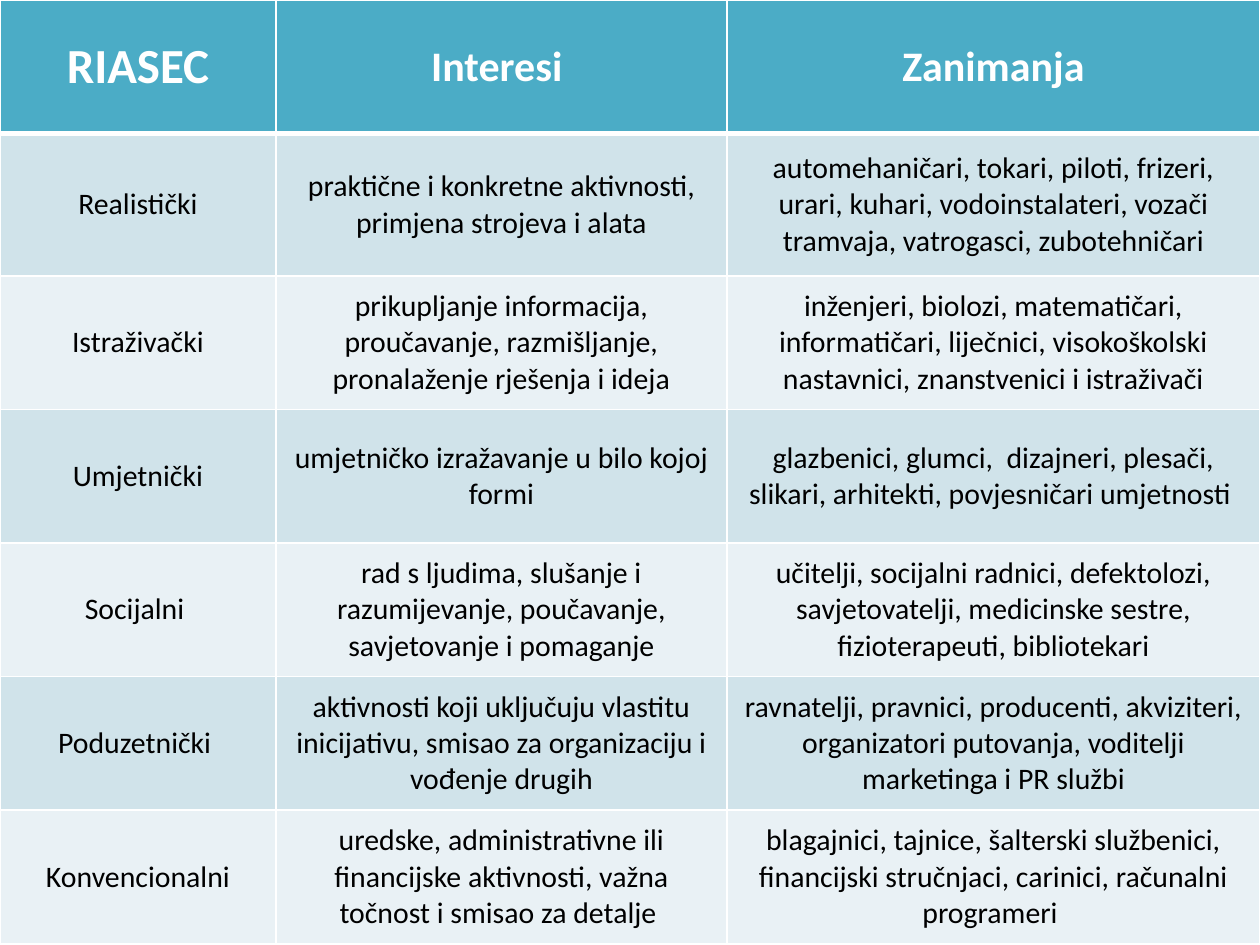
from lxml import etree
from pptx import Presentation
from pptx.dml.color import RGBColor
from pptx.enum.text import MSO_ANCHOR as Anchor, PP_ALIGN as Align
from pptx.oxml.ns import qn
from pptx.util import Inches, Pt

COLORS = {
    "header": "4BACC6",
    "odd_row": "D0E3EA",
    "even_row": "E9F1F5",
    "border": "FFFFFF",
    "header_text": "FFFFFF",
    "body_text": "000000",
}
FONT = "Calibri"
COLUMN_WIDTHS = [2.19, 3.58, 4.23]
ROW_HEIGHTS = [1.06, 1.13] + [1.06] * 5
HEADER_SIZES = [28, 24, 24]
BODY_SIZE = 17

ROWS = [
    ("RIASEC", "Interesi ", "Zanimanja"),
    ("Realistički",
     "praktične i konkretne aktivnosti, primjena strojeva i alata",
     "automehaničari, tokari, piloti, frizeri, urari, kuhari, vodoinstalateri, "
     "vozači tramvaja, vatrogasci, zubotehničari"),
    ("Istraživački",
     "prikupljanje informacija, proučavanje, razmišljanje, "
     "pronalaženje rješenja i ideja",
     "inženjeri, biolozi, matematičari, informatičari, liječnici, "
     "visokoškolski nastavnici, znanstvenici i istraživači"),
    ("Umjetnički",
     "umjetničko izražavanje u bilo kojoj formi",
     "glazbenici, glumci,  dizajneri, plesači, slikari, arhitekti, "
     "povjesničari umjetnosti "),
    ("Socijalni ",
     "rad s ljudima, slušanje i razumijevanje, poučavanje, "
     "savjetovanje i pomaganje",
     "učitelji, socijalni radnici, defektolozi, savjetovatelji, "
     "medicinske sestre, fizioterapeuti, bibliotekari"),
    ("Poduzetnički ",
     "aktivnosti koji uključuju vlastitu inicijativu, "
     "smisao za organizaciju i vođenje drugih",
     "ravnatelji, pravnici, producenti, akviziteri, organizatori putovanja, "
     "voditelji marketinga i PR službi"),
    ("Konvencionalni",
     "uredske, administrativne ili financijske aktivnosti, "
     "važna točnost i smisao za detalje ",
     "blagajnici, tajnice, šalterski službenici, financijski stručnjaci, "
     "carinici, računalni programeri "),
]


def color(name):
    return RGBColor.from_string(COLORS[name])


def set_borders(cell, top, bottom):
    """Draw the four cell edges; border lines come before the fill in the XML."""
    properties = cell._tc.get_or_add_tcPr()
    widths = {"a:lnL": 1, "a:lnR": 1, "a:lnT": top, "a:lnB": bottom}
    for position, (tag, width) in enumerate(widths.items()):
        line = etree.Element(qn(tag), w=str(Pt(width)))
        fill = etree.SubElement(line, qn("a:solidFill"))
        etree.SubElement(fill, qn("a:srgbClr"), val=COLORS["border"])
        properties.insert(position, line)


def fill_cell(cell, text, size, bold, text_color, fill_color):
    cell.fill.solid()
    cell.fill.fore_color.rgb = color(fill_color)
    cell.vertical_anchor = Anchor.MIDDLE
    cell.text_frame.text = text
    paragraph = cell.text_frame.paragraphs[0]
    paragraph.alignment = Align.CENTER
    font = paragraph.runs[0].font
    font.name, font.size, font.bold = FONT, Pt(size), bold
    font.color.rgb = color(text_color)


def add_riasec_table(slide):
    table = slide.shapes.add_table(
        len(ROWS), len(COLUMN_WIDTHS), 0, 0, Inches(10), Inches(7.5)).table
    for column, width in zip(table.columns, COLUMN_WIDTHS):
        column.width = Inches(width)
    for row, height in zip(table.rows, ROW_HEIGHTS):
        row.height = Inches(height)

    for row_index, texts in enumerate(ROWS):
        for column_index, text in enumerate(texts):
            cell = table.cell(row_index, column_index)
            if row_index == 0:
                fill_cell(cell, text, HEADER_SIZES[column_index], True,
                          "header_text", "header")
            else:
                band = "odd_row" if row_index % 2 else "even_row"
                fill_cell(cell, text, BODY_SIZE, False, "body_text", band)
            # The edge under the header is thicker than the others
            set_borders(cell, top=3 if row_index == 1 else 1,
                        bottom=3 if row_index == 0 else 1)


def main():
    presentation = Presentation()
    presentation.slide_width = Inches(10)
    presentation.slide_height = Inches(7.5)
    slide = presentation.slides.add_slide(presentation.slide_layouts[6])
    add_riasec_table(slide)
    presentation.save("out.pptx")


if __name__ == "__main__":
    main()
